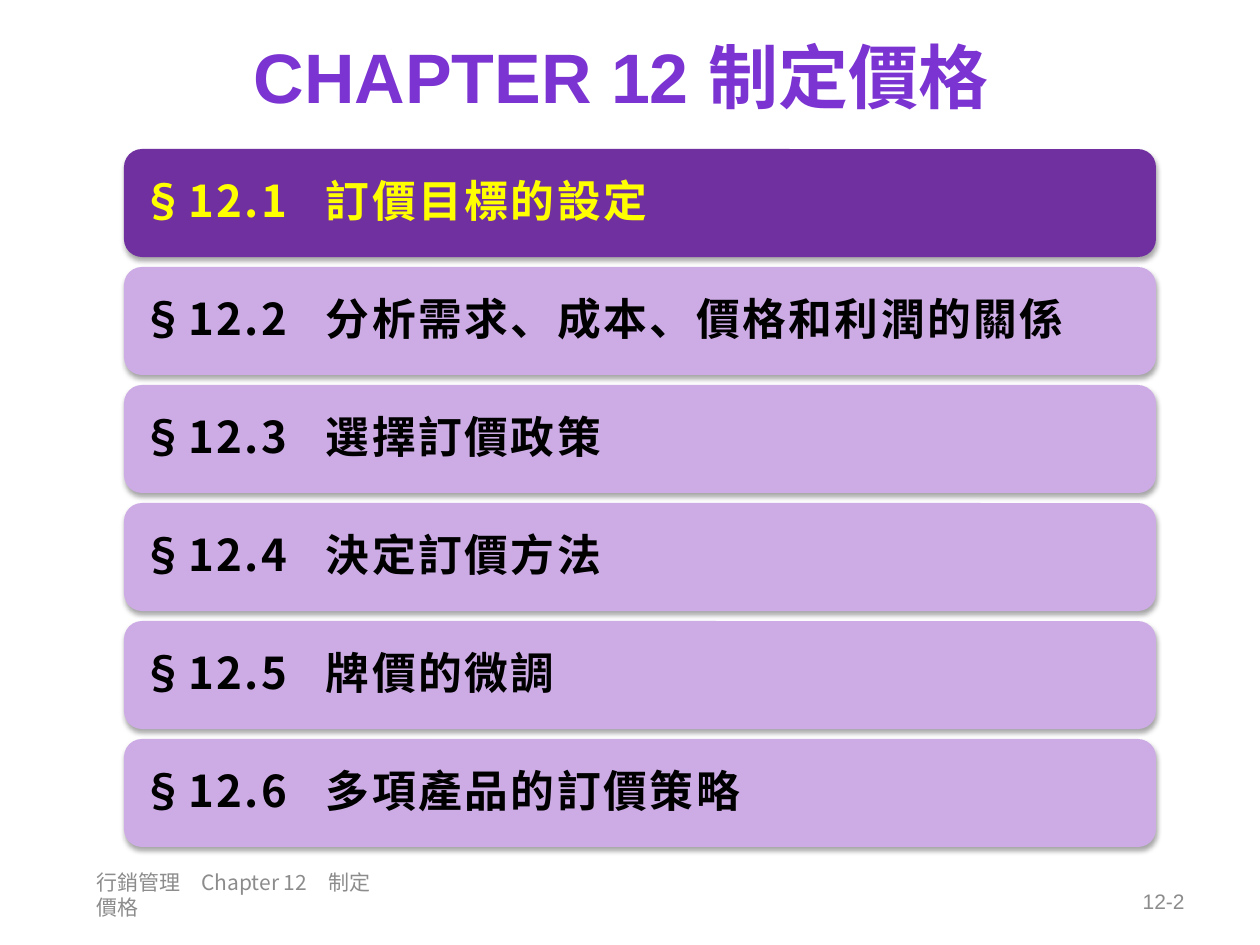
from lxml.etree import SubElement
from pptx import Presentation
from pptx.dml.color import RGBColor
from pptx.enum.shapes import MSO_SHAPE
from pptx.enum.text import MSO_ANCHOR, PP_ALIGN
from pptx.oxml.ns import qn
from pptx.util import Pt

SCALE = 914400 / 126
VIOLET = RGBColor(0x7B, 0x34, 0xD2)
PURPLE = RGBColor(0x70, 0x30, 0xA0)
LILAC = RGBColor(0xCD, 0xAC, 0xE6)
YELLOW = RGBColor(0xFF, 0xFF, 0x00)
BLACK = RGBColor(0x00, 0x00, 0x00)
GRAY = RGBColor(0x8C, 0x8C, 0x8C)
LATIN = "Arial"
HAN = "Noto Sans CJK SC"
TOPICS = [
    "訂價目標的設定",
    "分析需求、成本、價格和利潤的關係",
    "選擇訂價政策",
    "決定訂價方法",
    "牌價的微調",
    "多項產品的訂價策略",
]


def px(count):
    return round(count * SCALE)


def place(shape, box):
    shape.left, shape.top, shape.width, shape.height = map(px, box)


def add_run(para, text, size, face, color, bold=False, space=0):
    run = para.add_run()
    run.text = text
    font = run.font
    font.size = Pt(size)
    font.bold = bold
    font.name = face
    font.color.rgb = color
    props = font._element
    SubElement(props, qn("a:ea"), typeface=HAN)
    if space:
        props.set("spc", str(space))


def add_text(parent, box):
    frame = parent.add_textbox(*map(px, box)).text_frame
    frame.word_wrap = True
    frame.vertical_anchor = MSO_ANCHOR.MIDDLE
    return frame


def add_shadow(shape):
    shape.shadow.inherit = False
    effects = shape._element.spPr.find(qn("a:effectLst"))
    outer = SubElement(effects, qn("a:outerShdw"), blurRad="40000",
                       dist="23000", dir="5400000", rotWithShape="0")
    color = SubElement(outer, qn("a:srgbClr"), val="000000")
    SubElement(color, qn("a:alpha"), val="35000")


def add_title(slide, box):
    title = slide.shapes.title
    place(title, box)
    frame = title.text_frame
    frame.vertical_anchor = MSO_ANCHOR.MIDDLE
    para = frame.paragraphs[0]
    para.alignment = PP_ALIGN.CENTER
    add_run(para, "CHAPTER 12 制定價格", 40, LATIN, VIOLET, True)


def add_bar(parent, box, label, topic, fill, ink):
    left, top, width, height = box
    bar = parent.add_shape(MSO_SHAPE.ROUNDED_RECTANGLE, *map(px, box))
    bar.fill.solid()
    bar.fill.fore_color.rgb = fill
    bar.line.fill.background()
    add_shadow(bar)
    frame = add_text(parent, (left + 5, top + 5, width - 10, height - 10))
    frame.margin_left = frame.margin_right = px(13)
    frame.margin_top = frame.margin_bottom = px(13)
    para = frame.paragraphs[0]
    tabs = SubElement(para._p.get_or_add_pPr(), qn("a:tabLst"))
    SubElement(tabs, qn("a:tab"), pos=str(px(184)), algn="l")
    para.line_spacing = 0.9
    para.space_after = Pt(4)
    add_run(para, label + "\t", 25, HAN, ink, True, 150)
    add_run(para, topic, 25, LATIN, ink, True, 150)


def add_list(slide, box):
    left, top, width, height = box
    gap = 10
    step = (height + gap) / len(TOPICS)
    group = slide.shapes.add_group_shape()
    for index, topic in enumerate(TOPICS):
        fill, ink = (LILAC, BLACK) if index else (PURPLE, YELLOW)
        spot = (left, top + index * step, width, step - gap)
        add_bar(group.shapes, spot, f"§12.{index + 1}", topic, fill, ink)


def add_footer(slide, box):
    left, top, width, height = box
    note = add_text(slide.shapes, (left, top, 307, height)).paragraphs[0]
    add_run(note, "行銷管理　Chapter 12　制定價格", 12, HAN, GRAY)
    spot = (left + width - 294, top + 6, 294, height)
    page = add_text(slide.shapes, spot).paragraphs[0]
    page.alignment = PP_ALIGN.RIGHT
    add_run(page, "12-2", 12, LATIN, GRAY)


def main():
    deck = Presentation()
    deck.slide_width = px(1260)
    deck.slide_height = px(945)
    slide = deck.slides.add_slide(deck.slide_layouts[5])
    add_title(slide, (54, 5, 1134, 141))
    add_list(slide, (124, 149, 1032, 698))
    add_footer(slide, (84, 870, 1113, 50))
    deck.save("out.pptx")


if __name__ == "__main__":
    main()
